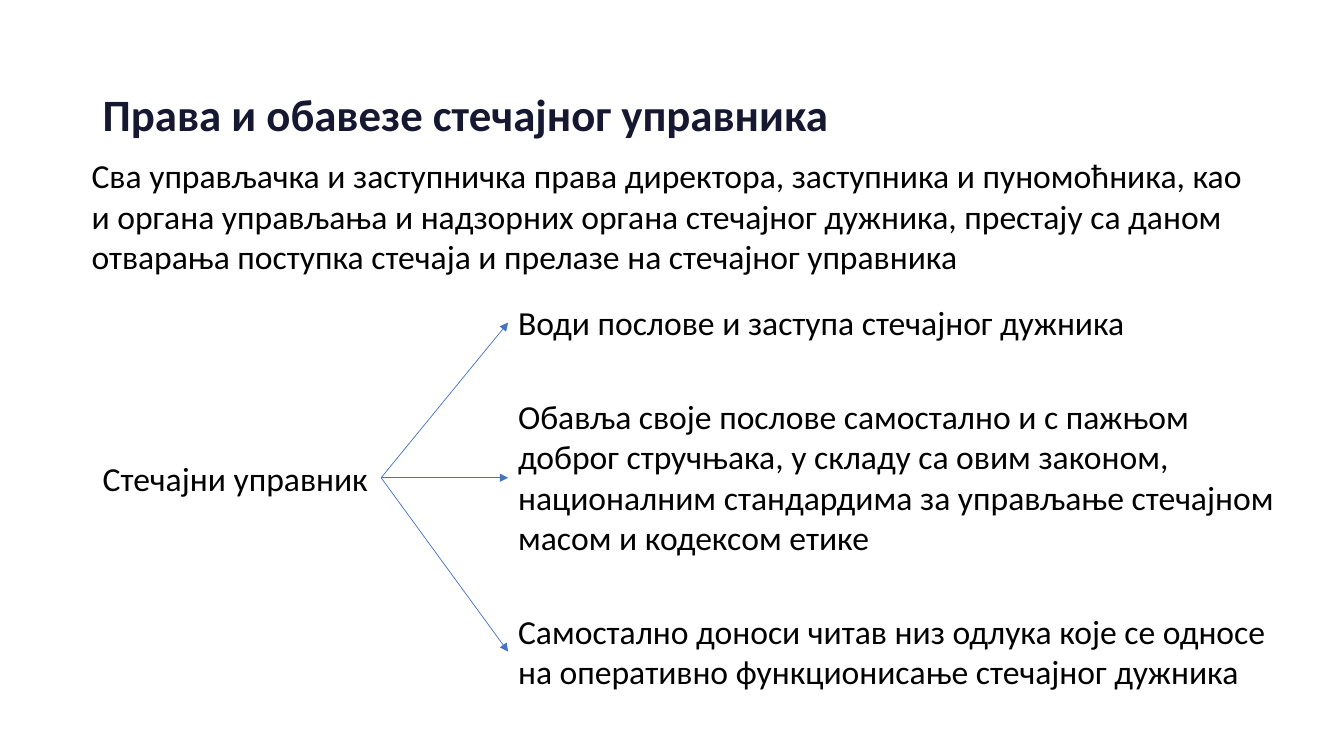
from pptx import Presentation
from pptx.dml.color import RGBColor
from pptx.enum.shapes import MSO_CONNECTOR
from pptx.enum.text import MSO_ANCHOR, MSO_AUTO_SIZE
from pptx.oxml.ns import qn
from pptx.util import Inches, Pt
from lxml.etree import SubElement

COLORS = {"title": "161730", "body": "000000", "arrow": "4472C4"}
TOP, LEFT, BOTTOM, RIGHT = range(4)


class SlideBuilder:
    """Draws styled elements on a grid of tenth-inch columns and rows."""

    cell = Inches(0.1)
    font_name = "Calibri"

    def __init__(self, deck):
        self.page = deck.slides.add_slide(deck.slide_layouts[6])

    def text(self, column, row, columns, rows, words, size=24, color="body", bold=False, wrap=True):
        lengths = [round(share * self.cell) for share in (column, row, columns, rows)]
        box = self.page.shapes.add_textbox(*lengths)
        frame = box.text_frame
        frame.word_wrap = wrap
        frame.auto_size = MSO_AUTO_SIZE.SHAPE_TO_FIT_TEXT
        para = frame.paragraphs[0]
        para.text = words
        para.font.name = self.font_name
        para.font.size = Pt(size)
        para.font.bold = bold
        para.font.color.rgb = RGBColor.from_string(COLORS[color])
        return box

    def title(self, column, row, columns, rows, words):
        box = self.text(column, row, columns, rows, words, size=32, color="title", bold=True)
        box.text_frame.vertical_anchor = MSO_ANCHOR.BOTTOM
        box.text_frame.paragraphs[0].line_spacing = 0.9

    def arrow(self, source, target):
        arrow = self.page.shapes.add_connector(MSO_CONNECTOR.STRAIGHT, 0, 0, 0, 0)
        arrow.begin_connect(source, RIGHT)
        arrow.end_connect(target, LEFT)
        arrow.line.width = Pt(0.5)
        arrow.line.color.rgb = RGBColor.from_string(COLORS["arrow"])
        SubElement(arrow.line._get_or_add_ln(), qn("a:tailEnd"), type="triangle")
        SubElement(arrow._element.spPr, qn("a:effectLst"))


def main():
    deck = Presentation()
    deck.slide_width, deck.slide_height = Inches(13.33), Inches(7.5)
    builder = SlideBuilder(deck)

    builder.title(9.2, 8.6, 115, 5.9, "Права и обавезе стечајног управника")
    builder.text(
        8.1, 14.9, 116.1, 13.1,
        "Сва управљачка и заступничка права директора, заступника и пуномоћника, "
        "као и органа управљања и надзорних органа стечајног дужника, престају са "
        "даном отварања поступка стечаја и прелазе на стечајног управника",
    )
    manager = builder.text(9.2, 44.9, 28.6, 5, "Стечајни управник", wrap=False)

    duties = [
        (29.5, 73, 5, "Води послове и заступа стечајног дужника"),
        (38.8, 78.4, 17.2,
         "Oбавља своје послове самостално и с пажњом доброг стручњака, "
         "у складу са овим законом, националним стандардима за управљање "
         "стечајном масом и кодексом етике"),
        (60.1, 78.4, 9.1,
         "Самостално доноси читав низ одлука које се односе на оперативно "
         "функционисање стечајног дужника"),
    ]
    for row, columns, rows, words in duties:
        duty = builder.text(50.4, row, columns, rows, words)
        builder.arrow(manager, duty)

    deck.save("out.pptx")


if __name__ == "__main__":
    main()
